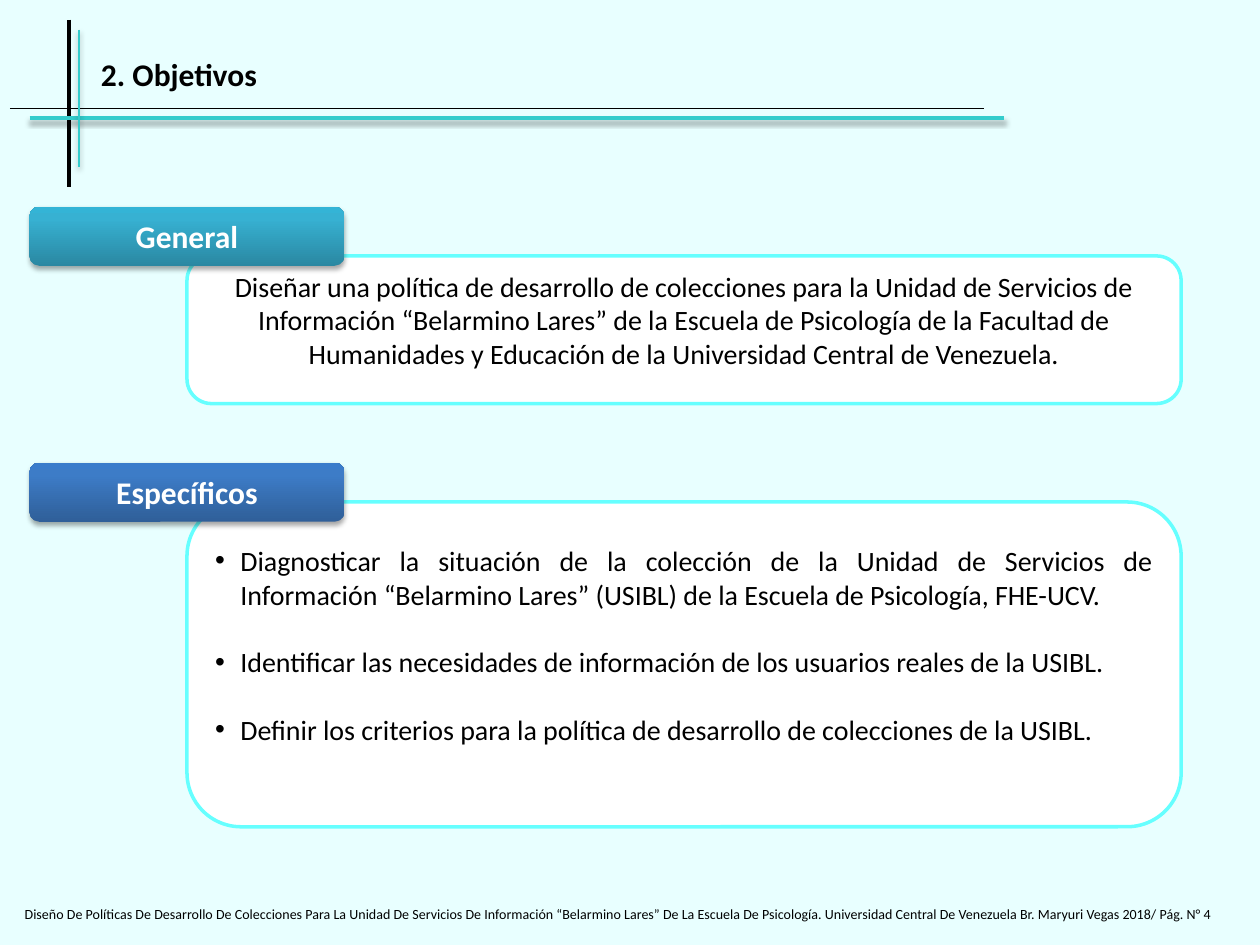
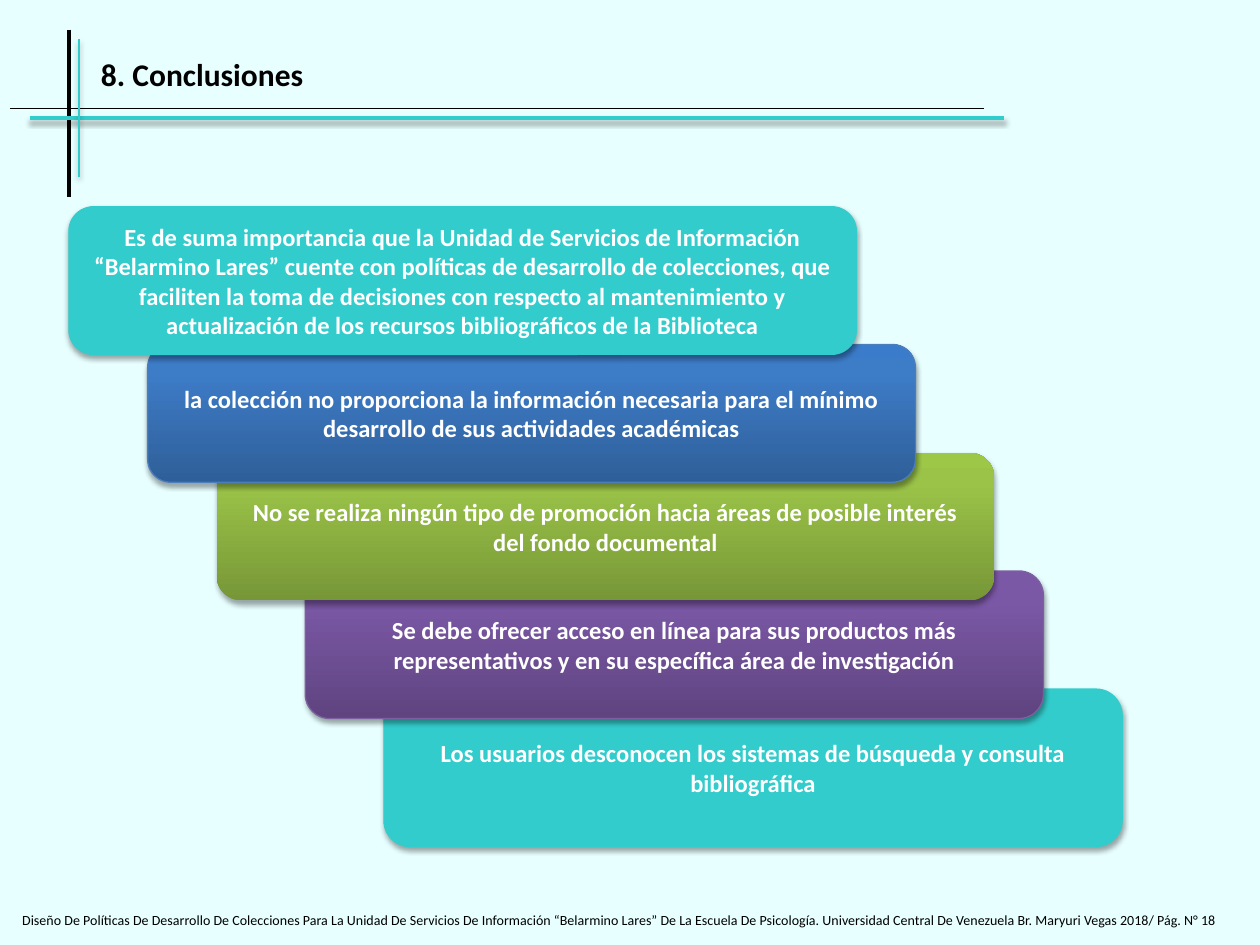
"""Builds the objectives and conclusions slides on a 128 by 96 grid."""
import copy
import dataclasses

import lxml.etree
import pptx
import pptx.dml.color
import pptx.enum.shapes
import pptx.enum.text
import pptx.oxml.ns
import pptx.util

RGB = pptx.dml.color.RGBColor.from_string
ALIGN = pptx.enum.text.PP_ALIGN
ANCHOR = pptx.enum.text.MSO_ANCHOR
qn = pptx.oxml.ns.qn


@dataclasses.dataclass(frozen=True)
class Theme:
    font: str = "Calibri"
    paper: str = "E8FFFF"
    ink: str = "000000"
    white: str = "FFFFFF"
    frame: str = "66FFFF"
    turquoise: str = "33CCCC"
    teal: tuple = ("2A88A2", "37B1D2", "34B4D6")
    blue: tuple = ("2F5F99", "3D7CC7", "3A7CCB")
    green: tuple = ("779737", "9BC348", "9DC746")
    purple: tuple = ("5F4480", "7B58A6", "7C57A8")
    blue_edge: str = "4B7EBC"
    purple_edge: str = "7D60A0"
    heading: int = 18
    body: int = 16
    step: int = 14
    footer: int = 8
    bullet_indent: float = 0.2
    bullet_gap: float = 19.5


theme = Theme()
deck = pptx.Presentation()
deck.slide_width = pptx.util.Inches(10)
deck.slide_height = pptx.util.Inches(7.5)
cell = deck.slide_width / 128


def set_shadow(element, opacity, distance):
    properties = element.spPr
    effects = properties.find(qn("a:effectLst"))
    if effects is None:
        effects = lxml.etree.SubElement(properties, qn("a:effectLst"))
    if opacity:
        outer = lxml.etree.SubElement(
            effects, qn("a:outerShdw"), blurRad=str(pptx.util.Pt(3.1)),
            dist=str(pptx.util.Pt(distance)), dir="5400000", rotWithShape="0")
        tint = lxml.etree.SubElement(outer, qn("a:srgbClr"), val=theme.ink)
        lxml.etree.SubElement(tint, qn("a:alpha"), val=str(opacity * 1000))


def add_block(slide, area, paragraphs, size, ink=theme.ink, bold=False, align=ALIGN.LEFT,
              anchor=ANCHOR.TOP, fill=None, edge=None, edge_width=0.75,
              shadow=False, bullets=False):
    box = [round(units * cell) for units in area]
    if fill is None:
        block = slide.shapes.add_textbox(*box)
    else:
        block = slide.shapes.add_shape(pptx.enum.shapes.MSO_SHAPE.ROUNDED_RECTANGLE, *box)
        block.shadow.inherit = False
        if isinstance(fill, tuple):
            block.fill.gradient()
            block.fill.gradient_angle = 90
            stops = block._element.spPr.find(qn("a:gradFill")).find(qn("a:gsLst"))
            stops.append(copy.deepcopy(stops[-1]))
            for stop, color, position in zip(block.fill.gradient_stops, fill, (0, 0.8, 1)):
                stop.color.rgb = RGB(color)
                stop.position = position
        else:
            block.fill.solid()
            block.fill.fore_color.rgb = RGB(fill)
        if edge:
            block.line.color.rgb = RGB(edge)
            block.line.width = pptx.util.Pt(edge_width)
        else:
            block.line.fill.background()
        if shadow:
            set_shadow(block._element, 35, 1.8)
    frame = block.text_frame
    frame.word_wrap = True
    frame.vertical_anchor = anchor
    if bullets:
        frame.margin_bottom = pptx.util.Inches(0.36)
    for number, wording in enumerate(paragraphs):
        paragraph = frame.add_paragraph() if number else frame.paragraphs[0]
        paragraph.alignment = align
        run = paragraph.add_run()
        run.text = wording
        run.font.color.rgb = RGB(ink)
        font_values = {"name": theme.font, "size": pptx.util.Pt(size), "bold": bold}
        for name, value in font_values.items():
            setattr(run.font, name, value)
        if bullets:
            if number:
                paragraph.space_before = pptx.util.Pt(theme.bullet_gap)
            settings = paragraph._p.get_or_add_pPr()
            indent = pptx.util.Inches(theme.bullet_indent)
            settings.set("marL", str(indent))
            settings.set("indent", str(-indent))
            lxml.etree.SubElement(settings, qn("a:buFont"), typeface="Arial")
            lxml.etree.SubElement(settings, qn("a:buChar"), char="•")


credit = ("Diseño De Políticas De Desarrollo De Colecciones Para La Unidad De Servicios "
          "De Información “Belarmino Lares” De La Escuela De Psicología. Universidad "
          "Central De Venezuela Br. Maryuri Vegas 2018/ Pág. N° ")
pages = [
    {"title": "2. Objetivos", "number": 4, "drop": 0, "footer_at": (1.25, 91.4)},
    {"title": "8. Conclusiones", "number": 18, "drop": 1, "footer_at": (1, 92)},
]
slides = []
for page in pages:
    slide = deck.slides.add_slide(deck.slide_layouts[6])
    slide.background.fill.solid()
    slide.background.fill.fore_color.rgb = RGB(theme.paper)
    drop = page["drop"]
    rules = [
        ((7, 2 + drop, 7, 19 + drop), theme.ink, 2.25, 0, 0),
        ((3, 12, 102, 12), theme.turquoise, 2, 38, 1.6),
        ((1, 11, 100, 11), theme.ink, 0.75, 0, 0),
        ((8, 3 + drop, 8, 17 + drop), theme.turquoise, 1, 35, 1.8),
    ]
    for ends, color, width, opacity, distance in rules:
        rule = slide.shapes.add_connector(
            pptx.enum.shapes.MSO_CONNECTOR.STRAIGHT, *[round(end * cell) for end in ends])
        rule.line.color.rgb = RGB(color)
        rule.line.width = pptx.util.Pt(width)
        set_shadow(rule._element, opacity, distance)
    add_block(slide, (9, 5, 66, 5), [page["title"]], theme.heading, bold=True)
    add_block(slide, (*page["footer_at"], 125.6, 3), [f"{credit} {page['number']}".replace("  ", " ")],
              theme.footer)
    slides.append(slide)

objectives, conclusions = slides

panel_look = {"size": theme.body, "fill": theme.white, "edge": theme.frame, "edge_width": 2}
goals = [
    ("General", 21, theme.teal, (26, 15),
     ["Diseñar una política de desarrollo de colecciones para la Unidad de Servicios de "
      "Información “Belarmino Lares” de la Escuela de Psicología de la Facultad de "
      "Humanidades y Educación de la Universidad Central de Venezuela."],
     {"align": ALIGN.CENTER}),
    ("Específicos", 47, theme.blue, (51, 33),
     ["Diagnosticar la situación de la colección de la Unidad de Servicios de Información "
      "“Belarmino Lares” (USIBL) de la Escuela de Psicología, FHE-UCV.",
      "Identificar las necesidades de información de los usuarios reales de la USIBL.",
      "Definir los criterios para la política de desarrollo de colecciones de la USIBL."],
     {"align": ALIGN.JUSTIFY, "anchor": ANCHOR.MIDDLE, "bullets": True}),
]
badge_look = {"ink": theme.white, "bold": True, "align": ALIGN.CENTER,
              "anchor": ANCHOR.MIDDLE, "shadow": True}
for label, label_row, gradient, (row, rows), statements, layout in goals:
    add_block(objectives, (19, row, 101, rows), statements, **panel_look, **layout)
    add_block(objectives, (3, label_row, 32, 6), [label], theme.heading,
              fill=gradient, **badge_look)

findings = [
    ((7, 21, 80, 15), theme.turquoise, theme.turquoise,
     "Es de suma importancia que la Unidad de Servicios de Información “Belarmino Lares” "
     "cuente con políticas de desarrollo de colecciones, que faciliten la toma de decisiones "
     "con respecto al mantenimiento y actualización de los recursos bibliográficos de la "
     "Biblioteca"),
    ((15, 35, 78, 14), theme.blue, theme.blue_edge,
     "la colección no proporciona la información necesaria para el mínimo desarrollo de "
     "sus actividades académicas"),
    ((22, 46, 79, 15), theme.green, None,
     "No se realiza ningún tipo de promoción hacia áreas de posible interés del fondo "
     "documental"),
    ((31, 58, 75, 15), theme.purple, theme.purple_edge,
     "Se debe ofrecer acceso en línea para sus productos más representativos y en su "
     "específica área de investigación"),
    ((39, 70, 75, 16), theme.turquoise, theme.turquoise,
     "Los usuarios desconocen los sistemas de búsqueda y consulta bibliográfica"),
]
for area, fill, edge, finding in reversed(findings):
    add_block(conclusions, area, [finding], theme.step, fill=fill, edge=edge, **badge_look)

deck.save("out.pptx")
